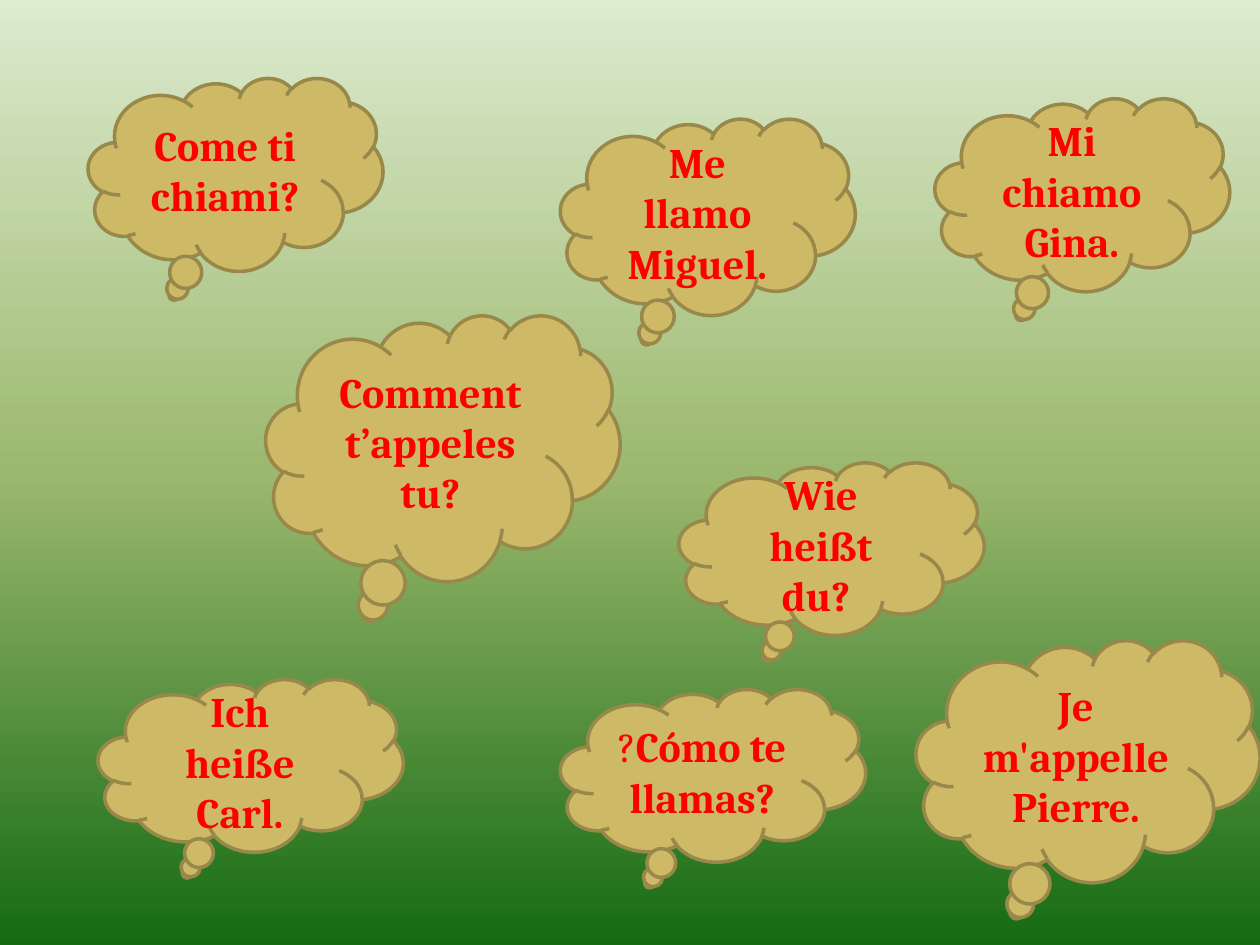
from copy import deepcopy

from pptx import Presentation
from pptx import util as u
from pptx.dml.color import RGBColor
from pptx.enum import shapes, text
from pptx.oxml.ns import qn

SKY = RGBColor(0xDD, 0xEB, 0xCF)
MEADOW = RGBColor(0x9C, 0xB8, 0x6E)
FOREST = RGBColor(0x15, 0x6B, 0x13)
SAND = RGBColor(0xCE, 0xB9, 0x66)
OLIVE = RGBColor(0x98, 0x89, 0x4B)
RED = RGBColor(0xFF, 0x00, 0x00)

SPEECH_FONT = {"name": "Cambria", "size": u.Pt(24)}
SMALL = (5.94, 3.89)
FLAT = (6.15, 3.48)

PHRASES = [
    ((11.3, 2.39, 5.94, 3.96), [[("Me llamo Miguel.", True)]]),
    ((18.85, 1.98, *SMALL), [[("Mi chiamo Gina.", True)]]),
    ((1.98, 13.69, *FLAT), [[("Ich heiße Carl.", True)]]),
    ((18.47, 12.9, 6.93, 4.88), [[("Je m'appelle", True)], [("Pierre.", True)]]),
    ((5.36, 6.35, 7.14, 5.36), [[("Comment t’appeles tu?", True)]]),
    ((11.3, 13.89, *FLAT), [[("?", False), ("Cómo te llamas?", True)]]),
    ((13.69, 9.32, *FLAT), [[("Wie heißt du? ", True)]]),
    ((1.78, 1.57, *SMALL), [[("Come ti chiami?", True)]]),
]


def paint_background(slide):
    fill = slide.background.fill
    fill.gradient()
    fill.gradient_angle = 270
    stop_list = slide.element.find(".//" + qn("a:gsLst"))
    stop_list.append(deepcopy(stop_list[-1]))
    colors = (SKY, MEADOW, FOREST)
    for stop, position, color in zip(fill.gradient_stops, (0, 0.5, 1), colors):
        stop.position = position
        stop.color.rgb = color


def add_thought(slide, box, lines):
    cloud = slide.shapes.add_shape(
        shapes.MSO_SHAPE.CLOUD_CALLOUT, *map(u.Cm, box)
    )
    cloud.shadow.inherit = False
    cloud.fill.solid()
    cloud.fill.fore_color.rgb = SAND
    cloud.line.color.rgb = OLIVE
    cloud.line.width = u.Pt(2)

    speech = cloud.text_frame
    speech.word_wrap = True
    speech.vertical_anchor = text.MSO_ANCHOR.MIDDLE
    for index, parts in enumerate(lines):
        line = speech.add_paragraph() if index else speech.paragraphs[0]
        line.alignment = text.PP_ALIGN.CENTER
        for words, bold in parts:
            run = line.add_run()
            run.text = words
            for key, value in {**SPEECH_FONT, "bold": bold}.items():
                setattr(run.font, key, value)
            run.font.color.rgb = RED


def main():
    deck = Presentation()
    deck.slide_width = u.Cm(25.4)
    deck.slide_height = u.Cm(19.05)
    slide = deck.slides.add_slide(deck.slide_layouts[6])
    paint_background(slide)
    for box, lines in PHRASES:
        add_thought(slide, box, lines)
    deck.save("out.pptx")


if __name__ == "__main__":
    main()
